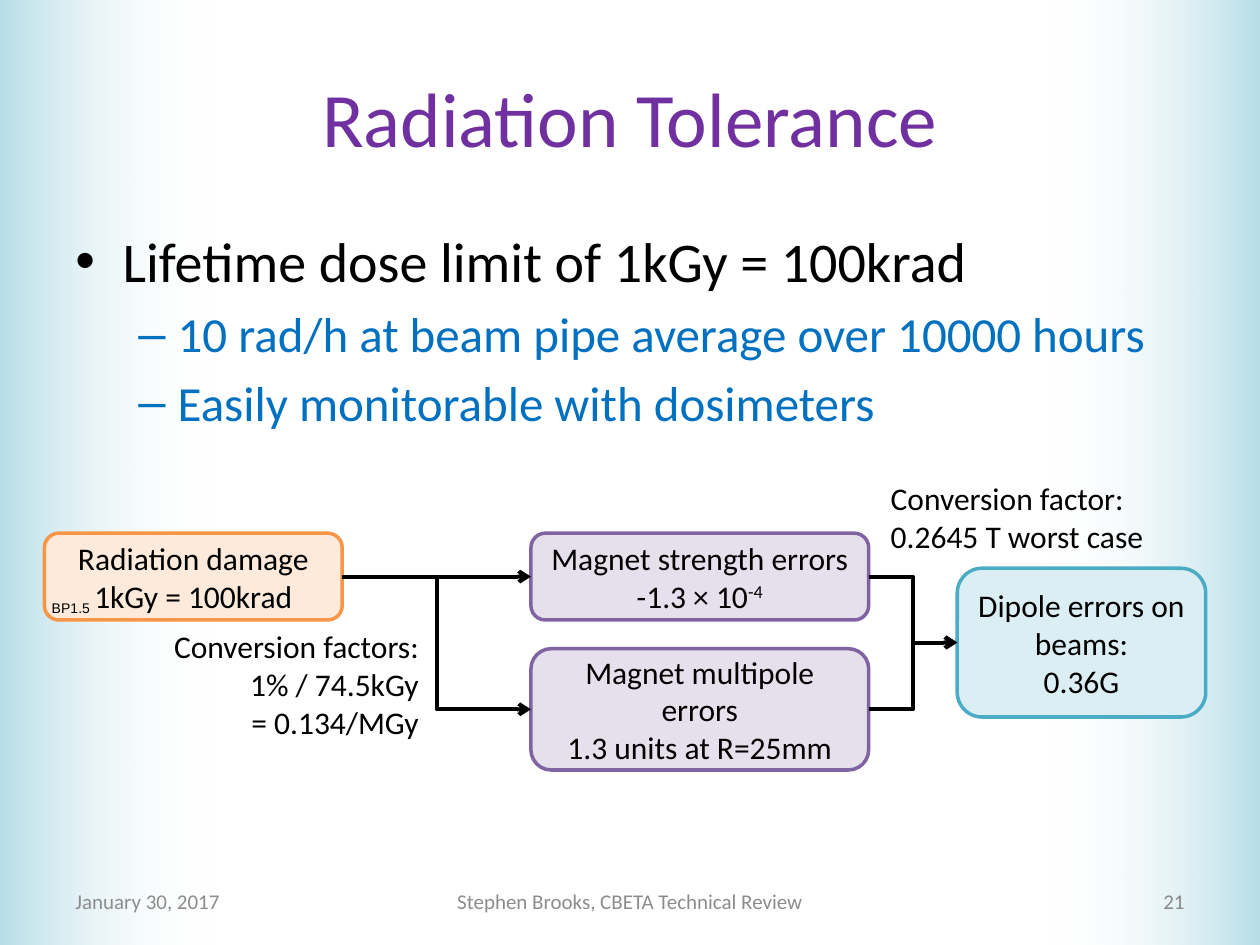
import pptx
import pptx.util
import pptx.dml.color
import pptx.enum.shapes
import pptx.enum.text
import pptx.oxml
import pptx.oxml.ns
import lxml.etree

Pt = pptx.util.Pt
qn = pptx.oxml.ns.qn
SHAPE = pptx.enum.shapes.MSO_SHAPE
ALIGN = pptx.enum.text.PP_ALIGN
ANCHOR = pptx.enum.text.MSO_ANCHOR
LEFT, RIGHT = 1, 3


def rgb(color):
    return pptx.dml.color.RGBColor.from_string(color)


def format_text(tf, size, color="000000", align=ALIGN.LEFT, font="Calibri"):
    for p in tf.paragraphs:
        p.alignment = align
        for r in p.runs:
            r.font.size = Pt(size)
            r.font.name = font
            r.font.color.rgb = rgb(color)


def add_text(s, box, text, size, color="000000", align=ALIGN.LEFT,
             anchor=ANCHOR.TOP, font="Calibri"):
    sp = s.shapes.add_textbox(*map(Pt, box))
    tf = sp.text_frame
    tf.word_wrap = True
    tf.vertical_anchor = anchor
    tf.text = text
    format_text(tf, size, color, align, font)
    return sp


def add_side_band(s, box, rotation):
    sp = s.shapes.add_shape(SHAPE.RECTANGLE, *map(Pt, box))
    sp.rotation = rotation
    sp.shadow.inherit = False
    sp.line.fill.background()
    sp.fill.gradient()
    sp.fill.gradient_angle = 0
    for stop, color in zip(sp.fill.gradient_stops, ("B7DEE8", "FFFFFF")):
        stop.color.rgb = rgb(color)
    clear = sp._element.spPr.findall(".//" + qn("a:srgbClr"))[-1]
    lxml.etree.SubElement(clear, qn("a:alpha"), val="0")
    s.shapes._spTree.insert(2, sp._element)


def add_title(s, box, text):
    sp = s.shapes.title
    sp.left, sp.top, sp.width, sp.height = map(Pt, box)
    tf = sp.text_frame
    tf.text = text
    tf.vertical_anchor = ANCHOR.MIDDLE
    format_text(tf, 44, "7030A0", ALIGN.CENTER)


def add_bullets(s, box, items):
    styles = [("•", 27, 27, 32, "000000"), ("–", 58.5, 22.5, 28, "0070C0")]
    sp = add_text(s, box, "\n".join(text for level, text in items), 32)
    for p, (level, text) in zip(sp.text_frame.paragraphs, items):
        mark, margin, hang, size, color = styles[level]
        p.level = level
        p.space_before = Pt(size * 0.2)
        p.runs[0].font.size = Pt(size)
        p.runs[0].font.color.rgb = rgb(color)
        pPr = p._p.get_or_add_pPr()
        pPr.set("marL", str(Pt(margin)))
        pPr.set("indent", str(-Pt(hang)))
        lxml.etree.SubElement(pPr, qn("a:buFont"), typeface="Arial")
        lxml.etree.SubElement(pPr, qn("a:buChar"), char=mark)


def add_box(s, box, text, fill, line):
    sp = s.shapes.add_shape(SHAPE.ROUNDED_RECTANGLE, *map(Pt, box))
    sp.shadow.inherit = False
    sp.fill.solid()
    sp.fill.fore_color.rgb = rgb(fill)
    sp.line.color.rgb = rgb(line)
    sp.line.width = Pt(2)
    tf = sp.text_frame
    tf.word_wrap = True
    tf.vertical_anchor = ANCHOR.MIDDLE
    tf.text = text
    format_text(tf, 18, align=ALIGN.CENTER)
    return sp


def add_arrow(s, source, target):
    cx = s.shapes.add_connector(pptx.enum.shapes.MSO_CONNECTOR.ELBOW, 0, 0, 0, 0)
    cx.begin_connect(source, RIGHT)
    cx.end_connect(target, LEFT)
    cx.line.color.rgb = rgb("000000")
    cx.line.width = Pt(2.25)
    lxml.etree.SubElement(cx.line._get_or_add_ln(), qn("a:tailEnd"), type="arrow")
    lxml.etree.SubElement(cx._element.spPr, qn("a:effectLst"))


def add_error_flow(s, box):
    x, y, w, h = box
    violet = ("E6E0EC", "8064A2")
    dipole = add_box(s, (x + w - 142, y + 54.7, 142, 85),
                     "Dipole errors on beams:\n0.36G", "DBEEF4", "4BACC6")
    multipole = add_box(s, (x + 278, y + h - 69.3, 193, 69.3),
                        "Magnet multipole errors\n1.3 units at R=25mm", *violet)
    strength = add_box(s, (x + 278, y + 34.7, 193, 49.6),
                       "Magnet strength errors\n-1.3 × 10", *violet)
    damage = add_box(s, (x, y + 34.7, 170.2, 49.6),
                     "Radiation damage\n1kGy = 100krad", "FDEADA", "F79646")

    p = strength.text_frame.paragraphs[1]
    p.add_run().text = "-4"
    format_text(strength.text_frame, 18, align=ALIGN.CENTER)
    p.runs[1].font._element.set("baseline", "30000")

    for source, target in ((strength, dipole), (multipole, dipole),
                           (damage, strength), (damage, multipole)):
        add_arrow(s, source, target)

    add_text(s, (x + 57, y + 85, 164, 72.7),
             "Conversion factors:\n1% / 74.5kGy\n= 0.134/MGy", 18, align=ALIGN.RIGHT)
    add_text(s, (x + 476.5, y, 187, 51),
             "Conversion factor:\n0.2645 T worst case", 18)
    tf = add_text(s, (x + 1.3, y + 69.8, 28, 15), "BP1.5", 8, font="Arial").text_frame
    tf.word_wrap = False
    tf.margin_left = tf.margin_top = tf.margin_right = tf.margin_bottom = Pt(2.88)


def add_footer(s, box, date, author, number):
    x, y, w, h = box
    parts = ((x, 168, date, "8C8C8C", ALIGN.LEFT),
             (x + (w - 228) / 2, 228, author, "8C8C8C", ALIGN.CENTER),
             (x + w - 168, 168, number, "898989", ALIGN.RIGHT))
    for left, width, text, color, align in parts:
        add_text(s, (left, y, width, h), text, 12, color, align, ANCHOR.MIDDLE)


def main():
    prs = pptx.Presentation()
    prs.slide_width, prs.slide_height = Pt(720), Pt(540)
    s = prs.slides.add_slide(prs.slide_layouts[5])
    add_side_band(s, (0, 0, 121.5, 540), 0)
    add_side_band(s, (598.5, 0, 121.5, 540), 180)
    add_title(s, (36, 21.6, 648, 90), "Radiation Tolerance")
    add_bullets(s, (36, 126, 648, 132.5), [
        (0, "Lifetime dose limit of 1kGy = 100krad"),
        (1, "10 rad/h at beam pipe average over 10000 hours"),
        (1, "Easily monitorable with dosimeters")])
    add_error_flow(s, (25.4, 270, 663.6, 170))
    add_footer(s, (36, 500.5, 648, 28.75), "January 30, 2017",
               "Stephen Brooks, CBETA Technical Review", "21")
    prs.save("out.pptx")


if __name__ == "__main__":
    main()
